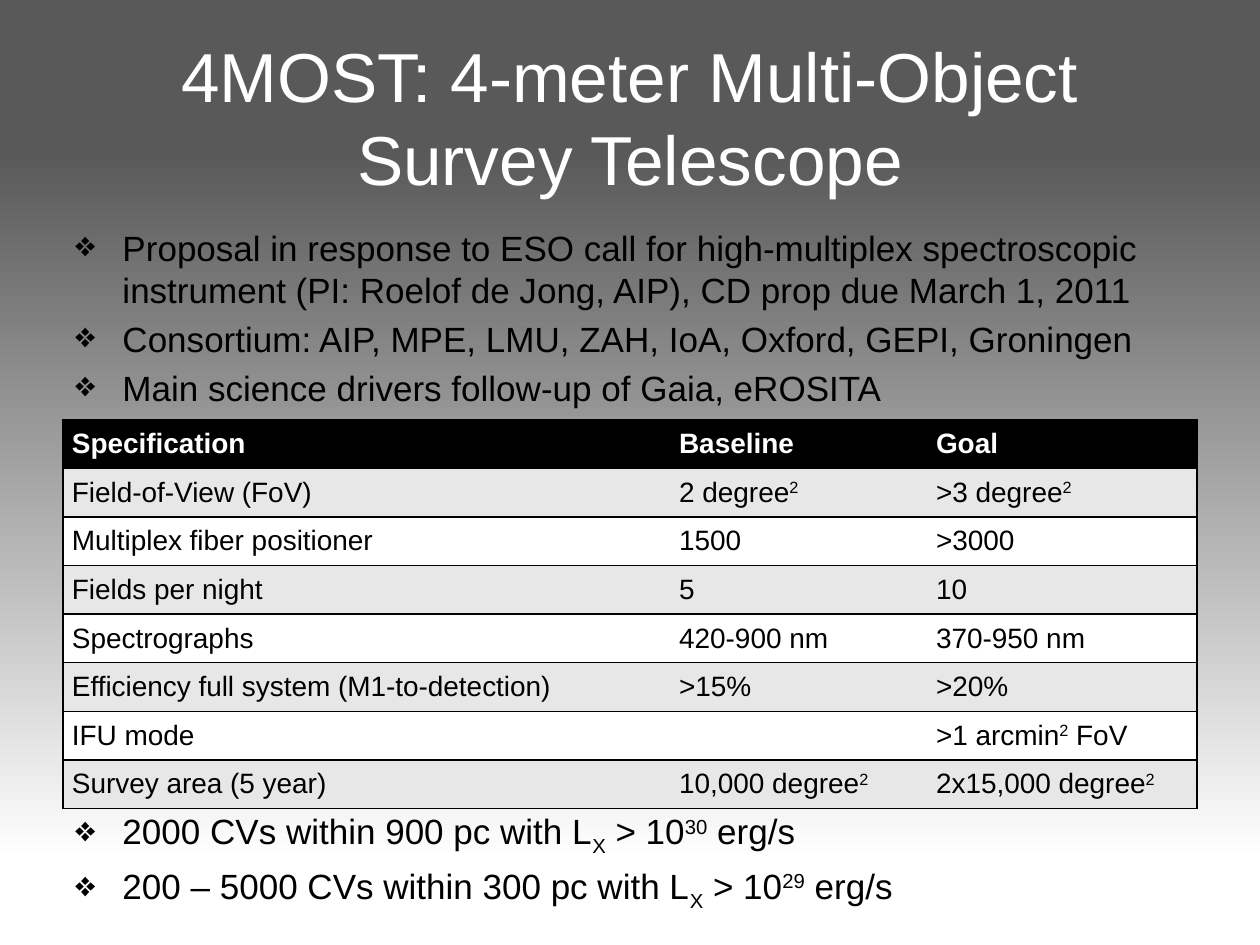
from lxml import etree
from pptx import Presentation
from pptx.dml.color import RGBColor
from pptx.enum.text import MSO_ANCHOR, PP_ALIGN
from pptx.oxml.ns import qn
from pptx.util import Cm, Pt

CENTER, JUSTIFY = PP_ALIGN.CENTER, PP_ALIGN.JUSTIFY
TOP, MIDDLE = MSO_ANCHOR.TOP, MSO_ANCHOR.MIDDLE
BLACK = RGBColor(0x00, 0x00, 0x00)
WHITE = RGBColor(0xFF, 0xFF, 0xFF)
DARK_GRAY = RGBColor(0x59, 0x59, 0x59)
BAND_GRAY = RGBColor(0xE7, 0xE7, 0xE7)
FONT = "Arial"

# In all text, ^{...} is raised and _{...} is lowered.
TITLE = "4MOST: 4-meter Multi-Object Survey Telescope"
BULLETS_ABOVE = [
    "Proposal in response to ESO call for high-multiplex spectroscopic "
    "instrument (PI: Roelof de Jong, AIP), CD prop due March 1, 2011",
    "Consortium: AIP, MPE, LMU, ZAH, IoA, Oxford, GEPI, Groningen",
    "Main science drivers follow-up of Gaia, eROSITA",
]
BULLETS_BELOW = [
    "2000 CVs within 900 pc with L_{X} > 10^{30} erg/s",
    "200 – 5000 CVs within 300 pc with L_{X} > 10^{29} erg/s",
]
SPECIFICATIONS = [
    ("Specification", "Baseline", "Goal"),
    ("Field-of-View (FoV)", "2 degree^{2}", ">3 degree^{2}"),
    ("Multiplex fiber positioner", "1500", ">3000"),
    ("Fields per night", "5", "10"),
    ("Spectrographs", "420-900 nm", "370-950 nm"),
    ("Efficiency full system (M1-to-detection)", ">15%", ">20%"),
    ("IFU mode", "", ">1 arcmin^{2} FoV"),
    ("Survey area (5 year)", "10,000 degree^{2}", "2x15,000 degree^{2}"),
]
COLUMN_WIDTHS = [Cm(12.24), Cm(5.18), Cm(5.44)]
ROW_HEIGHT = Cm(0.98)
BULLET_SPACING = Pt(4)
TABLE_GAP = Pt(229)  # space between the bullets that leaves room for the table


def set_font(paragraph, size, color, bold=False):
    font = paragraph.font
    font.name, font.size, font.bold = FONT, Pt(size), bold
    font.color.rgb = color


def add_marked_text(paragraph, text):
    """Add runs, turning ^{...} and _{...} into raised and lowered text."""
    for piece in text.replace("^{", "}^").replace("_{", "}_").split("}"):
        shift = {"^": "30000", "_": "-25000"}.get(piece[:1])
        if piece:
            run = paragraph.add_run()
            run.text = piece[1:] if shift else piece
            if shift:
                run.font._element.set("baseline", shift)


def add_bullet(paragraph):
    properties = paragraph._p.get_or_add_pPr()
    properties.set("marL", str(Cm(0.95)))
    properties.set("indent", str(-Cm(0.95)))
    bullet = etree.Element(qn("a:buChar"), char="❖")
    properties.find(qn("a:defRPr")).addprevious(bullet)


def set_borders(cell):
    properties = cell._tc.get_or_add_tcPr()
    for position, side in enumerate(("lnL", "lnR", "lnT", "lnB")):
        if side == "lnL" and cell not in first_column(cell):
            pass
        line = etree.Element(qn("a:" + side), w=str(Pt(1)))
        properties.insert(position, line)
        yield side, line


def draw_borders(cell, sides):
    """Draw black lines on the given sides and none on the others."""
    properties = cell._tc.get_or_add_tcPr()
    for position, side in enumerate("LRTB"):
        line = etree.Element(qn("a:ln" + side), w=str(Pt(1)))
        if side in sides:
            fill = etree.SubElement(line, qn("a:solidFill"))
            etree.SubElement(fill, qn("a:srgbClr"), val=str(BLACK))
        else:
            etree.SubElement(line, qn("a:noFill"))
        properties.insert(position, line)


def set_background(slide):
    fill = slide.background.fill
    fill.gradient()
    fill.gradient_angle = 270
    for stop, position, color in zip(
        fill.gradient_stops, (0.16, 0.91), (DARK_GRAY, WHITE)
    ):
        stop.position = position
        stop.color.rgb = color


def add_title(slide):
    title = slide.shapes.title
    title.left, title.top, title.width, title.height = (
        Cm(1.27), Cm(0.76), Cm(22.86), Cm(3.18))
    title.text_frame.text = TITLE
    title.text_frame.vertical_anchor = MIDDLE
    paragraph = title.text_frame.paragraphs[0]
    paragraph.alignment = CENTER
    set_font(paragraph, 39.6, WHITE)


def add_bullets(slide):
    box = slide.shapes.add_textbox(Cm(1.27), Cm(4.45), Cm(23.42), Cm(14.6))
    frame = box.text_frame
    frame.word_wrap = True
    frame.vertical_anchor = TOP
    for index, text in enumerate(BULLETS_ABOVE + BULLETS_BELOW):
        paragraph = frame.add_paragraph() if index else frame.paragraphs[0]
        below_table = index == len(BULLETS_ABOVE)
        paragraph.space_before = TABLE_GAP if below_table else BULLET_SPACING
        set_font(paragraph, 20, BLACK)
        add_bullet(paragraph)
        add_marked_text(paragraph, text)


def add_specification_table(slide):
    row_count, column_count = len(SPECIFICATIONS), len(COLUMN_WIDTHS)
    table = slide.shapes.add_table(
        row_count, column_count, Cm(1.27), Cm(8.46),
        sum(COLUMN_WIDTHS), ROW_HEIGHT * row_count).table
    for column, width in zip(table.columns, COLUMN_WIDTHS):
        column.width = width
    for row_index, texts in enumerate(SPECIFICATIONS):
        table.rows[row_index].height = ROW_HEIGHT
        header = row_index == 0
        band = BAND_GRAY if row_index % 2 else WHITE
        for column_index, text in enumerate(texts):
            cell = table.cell(row_index, column_index)
            cell.fill.solid()
            cell.fill.fore_color.rgb = BLACK if header else band
            cell.vertical_anchor = MIDDLE
            cell.margin_left = cell.margin_right = Cm(0.18)
            cell.margin_top = cell.margin_bottom = 0
            left = "L" if column_index == 0 else ""
            right = "R" if column_index == column_count - 1 else ""
            draw_borders(cell, left + right + "TB")
            paragraph = cell.text_frame.paragraphs[0]
            paragraph.alignment = JUSTIFY
            set_font(paragraph, 16, WHITE if header else BLACK, bold=header)
            add_marked_text(paragraph, text)


def main():
    presentation = Presentation()
    presentation.slide_width, presentation.slide_height = Cm(25.4), Cm(19.05)
    slide = presentation.slides.add_slide(presentation.slide_layouts[5])
    set_background(slide)
    add_title(slide)
    add_bullets(slide)
    add_specification_table(slide)
    presentation.save("out.pptx")


if __name__ == "__main__":
    main()
